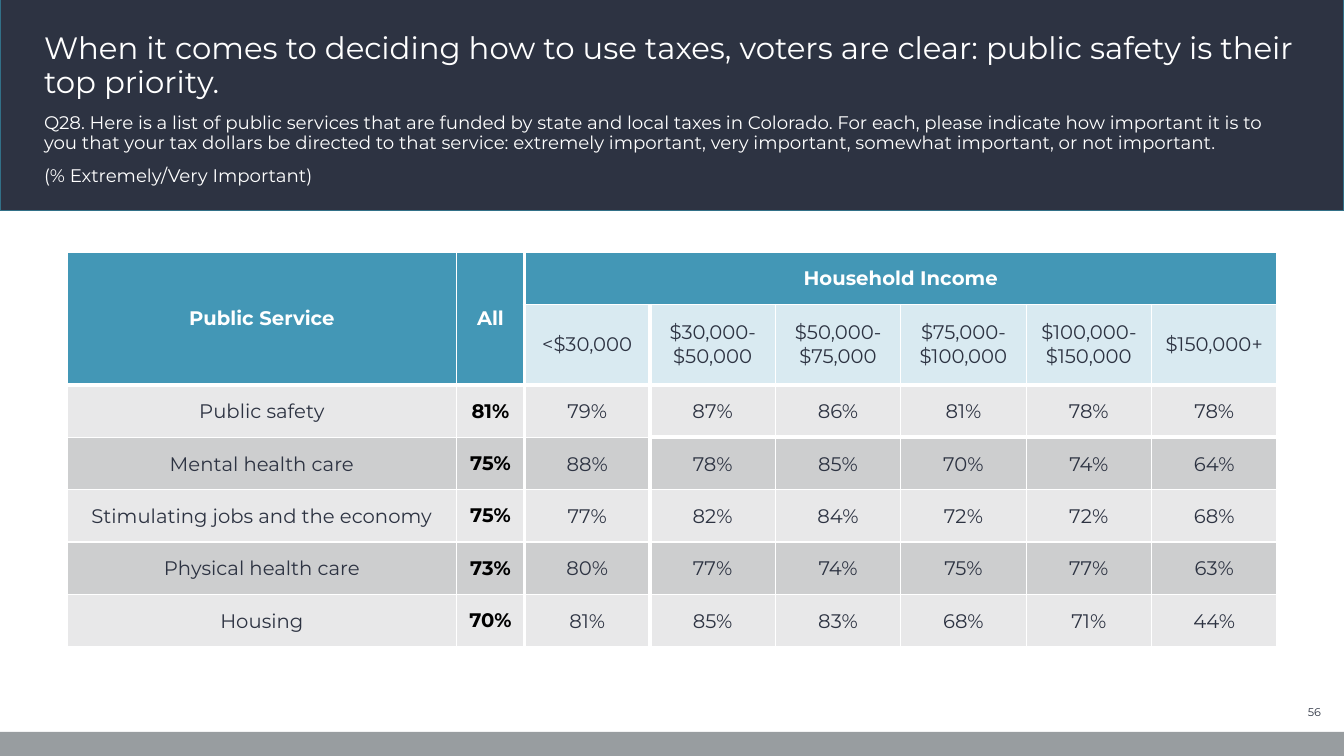
import pptx
import pptx.util
import pptx.dml.color
import pptx.enum.shapes
import pptx.enum.text
import pptx.oxml
import pptx.oxml.ns

Cm, Pt = pptx.util.Cm, pptx.util.Pt
ALIGN, ANCHOR = pptx.enum.text.PP_ALIGN, pptx.enum.text.MSO_ANCHOR

FONT = "Montserrat"
NAVY, TEAL, PALE_BLUE, WHITE, BLACK = "2D3342", "4397B6", "D9EAF1", "FFFFFF", "000000"
BANDS = ["E8E8E9", "CDCECF"]

TITLE = ("When it comes to deciding how to use taxes, voters are clear: "
         "public safety is their top priority.")
QUESTION = ("Q28. Here is a list of public services that are funded by state and local "
            "taxes in Colorado. For each, please indicate how important it is to you that "
            "your tax dollars be directed to that service: extremely important, very "
            "important, somewhat important, or not important.")
MEASURE = "(% Extremely/Very Important)"

ROWS = [
    ["Public Service", "All", "Household Income", "", "", "", "", ""],
    ["", "", "<$30,000", "$30,000-$50,000", "$50,000-$75,000", "$75,000-$100,000",
     "$100,000-$150,000", "$150,000+"],
    ["Public safety", "81%", "79%", "87%", "86%", "81%", "78%", "78%"],
    ["Mental health care", "75%", "88%", "78%", "85%", "70%", "74%", "64%"],
    ["Stimulating jobs and the economy", "75%", "77%", "82%", "84%", "72%", "72%", "68%"],
    ["Physical health care", "73%", "80%", "77%", "74%", "75%", "77%", "63%"],
    ["Housing", "70%", "81%", "85%", "83%", "68%", "71%", "44%"],
]
HEADER_ROWS = 2
COL_WIDTHS = [9.8, 1.72] + [3.16] * 6
ROW_HEIGHTS = [1.32, 2.03] + [1.32] * 5


def rgb(value):
    return pptx.dml.color.RGBColor.from_string(value)


def style(p, size, color, bold=False):
    p.font.name = FONT
    p.font.size = Pt(size)
    p.font.bold = bold
    p.font.color.rgb = rgb(color)


def add_bar(s, x, y, w, h, fill, line=None):
    sp = s.shapes.add_shape(pptx.enum.shapes.MSO_SHAPE.RECTANGLE, Cm(x), Cm(y), Cm(w), Cm(h))
    sp.shadow.inherit = False
    sp.fill.solid()
    sp.fill.fore_color.rgb = rgb(fill)
    if line:
        sp.line.color.rgb = rgb(line)
        sp.line.width = Pt(1)
    else:
        sp.line.fill.background()


def add_text(s, x, y, w, h, paragraphs, size, color, anchor=ANCHOR.TOP,
             align=ALIGN.LEFT, spacing=0.9):
    tf = s.shapes.add_textbox(Cm(x), Cm(y), Cm(w), Cm(h)).text_frame
    tf.word_wrap = True
    tf.vertical_anchor = anchor
    for i, text in enumerate(paragraphs):
        p = tf.add_paragraph() if i else tf.paragraphs[0]
        p.text = text
        p.alignment = align
        p.line_spacing = spacing
        if i:
            p.space_before = Pt(10)
        style(p, size, color)


def add_header(s, x, y, w, h):
    add_bar(s, x, y, w, h, NAVY, "327087")
    add_text(s, x + 0.86, y + 0.26, w - 1.76, 2.46, [TITLE], 22, WHITE, ANCHOR.BOTTOM)
    add_text(s, x + 0.86, y + 2.82, w - 1.76, 2.34, [QUESTION, MEASURE], 13, WHITE)


def add_footer(s, x, y, w, h):
    add_bar(s, x, y, w, h, "989DA0")
    add_text(s, x + w - 2.31, y - 0.79, 1.98, 0.61, ["56"], 8, NAVY,
             ANCHOR.MIDDLE, ALIGN.RIGHT, 1.0)


def column_rule(r, c):
    """Width of the vertical rule to the right of column c."""
    return 3 if c == 1 or (c == 2 and r > 0) else 1


def row_rule(r, c):
    """Width of the horizontal rule below row r."""
    return 3 if r == 1 or (r == 2 and c > 2) else 1


def set_borders(cell, r, c):
    widths = {"lnL": column_rule(r, c - 1), "lnR": column_rule(r, c),
              "lnT": row_rule(r - 1, c), "lnB": row_rule(r, c)}
    tc_pr = cell._tc.get_or_add_tcPr()
    for i, (tag, width) in enumerate(widths.items()):
        tc_pr.insert(i, pptx.oxml.parse_xml(
            f'<a:{tag} {pptx.oxml.ns.nsdecls("a")} w="{Pt(width)}"><a:solidFill>'
            f'<a:srgbClr val="{WHITE}"/></a:solidFill></a:{tag}>'))


def cell_look(r, c):
    """Fill, text colour and weight of a cell."""
    if r >= HEADER_ROWS:
        fill = BANDS[(r - HEADER_ROWS) % 2]
        return (fill, BLACK, True) if c == 1 else (fill, NAVY, False)
    if r == 1 and c > 1:
        return PALE_BLUE, NAVY, False
    return TEAL, WHITE, True


def add_income_table(s, x, y):
    table = s.shapes.add_table(len(ROWS), len(COL_WIDTHS), Cm(x), Cm(y),
                               Cm(sum(COL_WIDTHS)), Cm(sum(ROW_HEIGHTS))).table
    for column, width in zip(table.columns, COL_WIDTHS):
        column.width = Cm(width)
    for row, height in zip(table.rows, ROW_HEIGHTS):
        row.height = Cm(height)

    # Merged headings
    for c in (0, 1):
        table.cell(0, c).merge(table.cell(1, c))
    table.cell(0, 2).merge(table.cell(0, len(COL_WIDTHS) - 1))

    # Cells
    for r, texts in enumerate(ROWS):
        for c, text in enumerate(texts):
            cell = table.cell(r, c)
            fill, color, bold = cell_look(r, c)
            cell.fill.solid()
            cell.fill.fore_color.rgb = rgb(fill)
            set_borders(cell, r, c)
            cell.vertical_anchor = ANCHOR.MIDDLE
            header = r < HEADER_ROWS
            cell.margin_left = cell.margin_right = Cm(0.25 if header else 0.03)
            cell.margin_top = Cm(0.25 if header or c == 1 else 0.03)
            cell.margin_bottom = Cm(0.25 if header or c == 1 else 0)
            p = cell.text_frame.paragraphs[0]
            if text:
                p.text = text
            p.alignment = ALIGN.CENTER
            style(p, 14, color, bold)


def main():
    prs = pptx.Presentation()
    prs.slide_width, prs.slide_height = Cm(33.87), Cm(19.05)
    s = prs.slides.add_slide(prs.slide_layouts[6])
    add_header(s, 0, -0.08, 33.87, 5.38)
    add_footer(s, 0, 18.44, 33.87, 0.61)
    add_income_table(s, 1.7, 6.35)
    prs.save("out.pptx")


if __name__ == "__main__":
    main()
